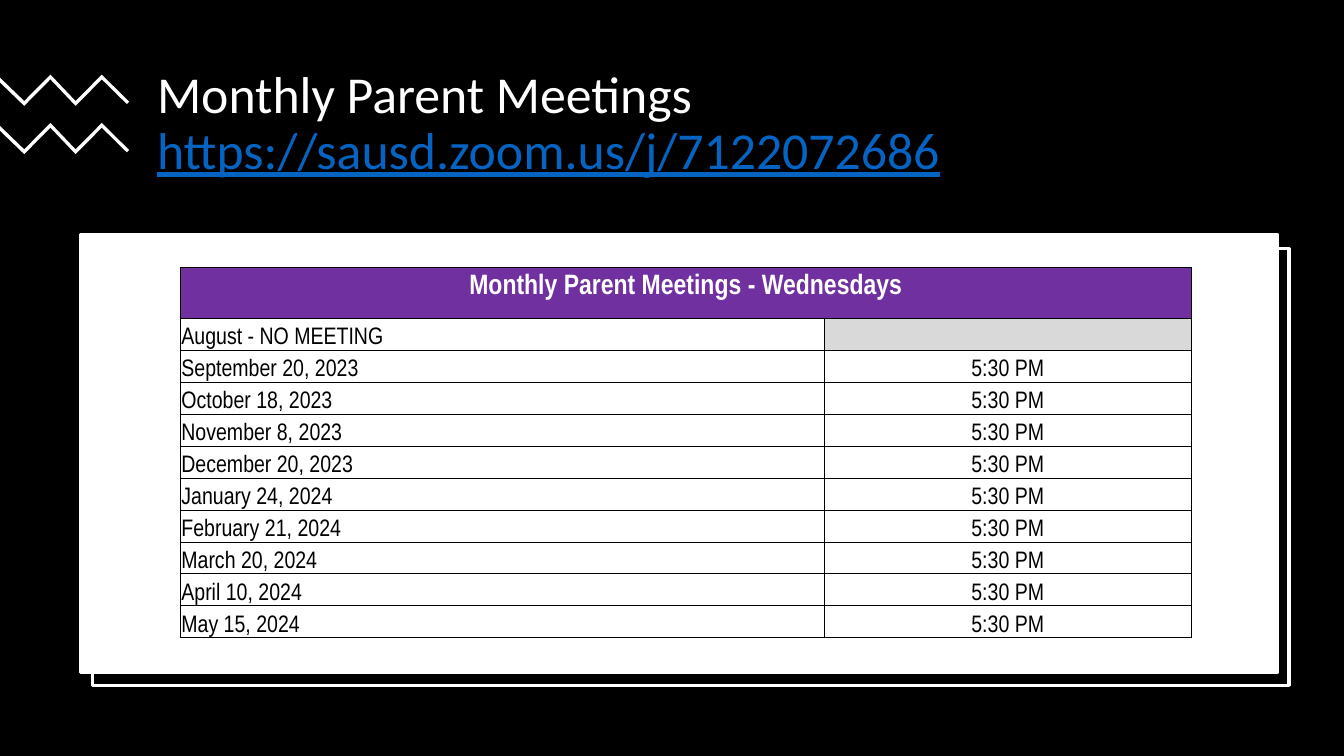
from dataclasses import dataclass
from typing import NamedTuple, Optional

from lxml.etree import SubElement
from pptx import Presentation
from pptx.dml.color import RGBColor as RGB
from pptx.enum.shapes import MSO_SHAPE as Shape
from pptx.enum.text import MSO_ANCHOR as Anchor, PP_ALIGN as Align
from pptx.oxml.ns import qn
from pptx.util import Pt


@dataclass(frozen=True)
class Theme:
    black: RGB = RGB(0x00, 0x00, 0x00)
    white: RGB = RGB(0xFF, 0xFF, 0xFF)
    link: RGB = RGB(0x05, 0x63, 0xC1)
    header: RGB = RGB(0x70, 0x30, 0xA0)
    no_meeting: RGB = RGB(0xD9, 0xD9, 0xD9)
    title_font: str = "Calibri"
    table_font: str = "Arial Narrow"
    title_size: float = 37
    header_size: float = 20
    body_size: float = 17
    panel_line: float = 2.25
    border: float = 0.5


class Panel(NamedTuple):
    left: float
    top: float
    width: float
    height: float
    fill: RGB
    line: Optional[RGB] = None


class CellStyle(NamedTuple):
    size: float
    color: RGB
    bold: bool
    align: Align
    anchor: Anchor
    margins: tuple[float, float, float, float]  # left, top, right, bottom
    fill: Optional[RGB] = None


THEME = Theme()
SLIDE_WIDTH, SLIDE_HEIGHT = 960, 540

PANELS = [
    Panel(0, 0, SLIDE_WIDTH, SLIDE_HEIGHT, THEME.black),
    Panel(66.2, 177.8, 854.6, 311.8, THEME.black, THEME.white),
    Panel(57.6, 167.4, 854.6, 313, THEME.white, THEME.white),
]

ZIGZAG_TOPS = (53.3, 87.8)
ZIGZAG_EDGE = [(0, 2.2), (17.3, 18.9), (36, 0), (54, 18.9), (72.7, 0)]
ZIGZAG_TIP = [(92.2, 19.4), (90.6, 21)]
ZIGZAG_THICKNESS = 3.4

TABLE_LEFT, TABLE_TOP = 128.9, 190.8
COLUMN_WIDTHS = (460, 262)
HEADER_HEIGHT, ROW_HEIGHT = 36.3, 22.87
HEADER_TEXT = "Monthly Parent Meetings - Wednesdays"
MEETING_TIME = "5:30 PM"
MEETINGS = [
    ("August - NO MEETING", ""),
    *((date, MEETING_TIME) for date in (
        "September 20, 2023", "October 18, 2023", "November 8, 2023",
        "December 20, 2023", "January 24, 2024", "February 21, 2024",
        "March 20, 2024", "April 10, 2024", "May 15, 2024",
    )),
]

BODY_MARGINS = (0.7, 0.7, 0.7, 0)
HEADER_STYLE = CellStyle(THEME.header_size, THEME.white, True, Align.CENTER,
                         Anchor.TOP, (10, 5, 10, 5), THEME.header)
DATE_STYLE = CellStyle(THEME.body_size, THEME.black, False, Align.LEFT,
                       Anchor.BOTTOM, BODY_MARGINS)
TIME_STYLE = DATE_STYLE._replace(align=Align.CENTER)
EMPTY_STYLE = TIME_STYLE._replace(fill=THEME.no_meeting)


def add_panel(slide, panel: Panel) -> None:
    shape = slide.shapes.add_shape(
        Shape.RECTANGLE, Pt(panel.left), Pt(panel.top), Pt(panel.width), Pt(panel.height))
    shape.shadow.inherit = False
    shape.fill.solid()
    shape.fill.fore_color.rgb = panel.fill
    if panel.line is None:
        shape.line.fill.background()
    else:
        shape.line.color.rgb = panel.line
        shape.line.width = Pt(THEME.panel_line)


def add_zigzag(slide, top: float) -> None:
    """Draw a band whose lower edge is the upper edge shifted down."""
    lower_edge = [(x, y + ZIGZAG_THICKNESS) for x, y in reversed(ZIGZAG_EDGE)]
    outline = [(Pt(x), Pt(top + y)) for x, y in ZIGZAG_EDGE + ZIGZAG_TIP + lower_edge]
    builder = slide.shapes.build_freeform(*outline[0])
    builder.add_line_segments(outline[1:], close=True)
    shape = builder.convert_to_shape()
    shape.shadow.inherit = False
    shape.fill.solid()
    shape.fill.fore_color.rgb = THEME.white
    shape.line.fill.background()


def add_title_run(paragraph, text: str, color: RGB, underline: bool = False) -> None:
    run = paragraph.add_run()
    run.text = text
    run.font.name = THEME.title_font
    run.font.size = Pt(THEME.title_size)
    run.font.color.rgb = color
    run.font.underline = underline


def add_title(slide) -> None:
    box = slide.shapes.add_textbox(Pt(105.1), Pt(44.6), Pt(767.5), Pt(88.6))
    frame = box.text_frame
    frame.word_wrap = True
    frame.vertical_anchor = Anchor.MIDDLE
    paragraph = frame.paragraphs[0]
    paragraph.line_spacing = 0.9
    add_title_run(paragraph, "Monthly Parent Meetings", THEME.white)
    paragraph.add_line_break()
    add_title_run(paragraph, "https://sausd.zoom.us/j/7122072686", THEME.link, underline=True)


def add_borders(cell) -> None:
    properties = cell._tc.get_or_add_tcPr()
    for side in ("L", "R", "T", "B"):
        line = SubElement(properties, qn(f"a:ln{side}"), w=str(Pt(THEME.border)))
        fill = SubElement(line, qn("a:solidFill"))
        SubElement(fill, qn("a:srgbClr"), val=str(THEME.black))


def fill_cell(cell, text: str, style: CellStyle) -> None:
    cell.margin_left, cell.margin_top, cell.margin_right, cell.margin_bottom = map(
        Pt, style.margins)
    cell.vertical_anchor = style.anchor
    if style.fill is None:
        cell.fill.background()
    else:
        cell.fill.solid()
        cell.fill.fore_color.rgb = style.fill
    paragraph = cell.text_frame.paragraphs[0]
    paragraph.alignment = style.align
    if text:
        run = paragraph.add_run()
        run.text = text
        run.font.name = THEME.table_font
        run.font.size = Pt(style.size)
        run.font.bold = style.bold
        run.font.color.rgb = style.color


def add_schedule(slide) -> None:
    row_heights = [HEADER_HEIGHT] + [ROW_HEIGHT] * len(MEETINGS)
    table = slide.shapes.add_table(
        len(row_heights), len(COLUMN_WIDTHS), Pt(TABLE_LEFT), Pt(TABLE_TOP),
        Pt(sum(COLUMN_WIDTHS)), Pt(sum(row_heights))).table
    table.first_row = table.horz_banding = False
    for column, width in zip(table.columns, COLUMN_WIDTHS):
        column.width = Pt(width)
    for row, height in zip(table.rows, row_heights):
        row.height = Pt(height)
    for cell in table.iter_cells():
        add_borders(cell)

    table.cell(0, 0).merge(table.cell(0, 1))
    fill_cell(table.cell(0, 0), HEADER_TEXT, HEADER_STYLE)
    for row_index, (date, time) in enumerate(MEETINGS, start=1):
        fill_cell(table.cell(row_index, 0), date, DATE_STYLE)
        fill_cell(table.cell(row_index, 1), time, TIME_STYLE if time else EMPTY_STYLE)


def main() -> None:
    presentation = Presentation()
    presentation.slide_width = Pt(SLIDE_WIDTH)
    presentation.slide_height = Pt(SLIDE_HEIGHT)
    slide = presentation.slides.add_slide(presentation.slide_layouts[6])
    backdrop, *schedule_panels = PANELS
    add_panel(slide, backdrop)
    add_title(slide)
    for top in ZIGZAG_TOPS:
        add_zigzag(slide, top)
    for panel in schedule_panels:
        add_panel(slide, panel)
    add_schedule(slide)
    presentation.save("out.pptx")


if __name__ == "__main__":
    main()
